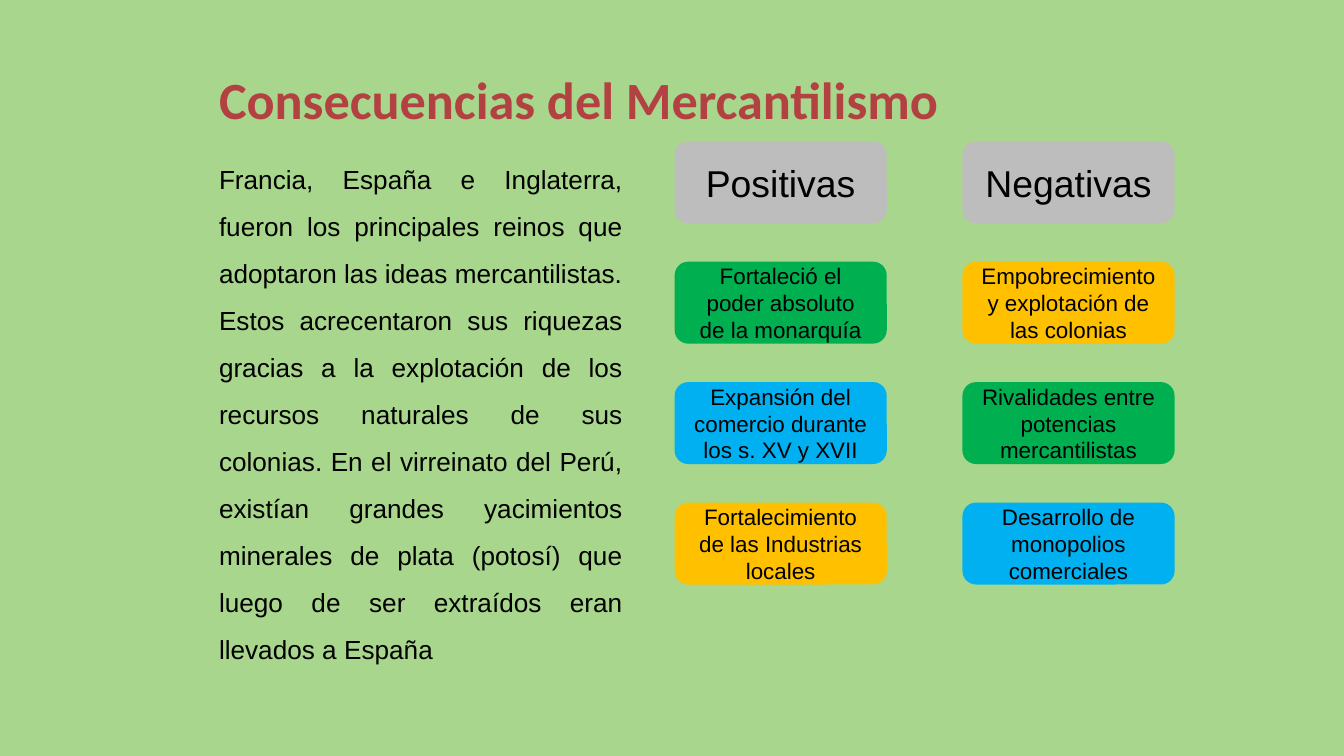
from pptx import Presentation
from pptx.dml.color import RGBColor
from pptx.enum.shapes import MSO_SHAPE as SHAPE
from pptx.enum.text import MSO_ANCHOR as ANCHOR, PP_ALIGN as ALIGN
from pptx.util import Cm, Pt

BACKGROUND = RGBColor(0xA8, 0xD6, 0x8C)
RED = RGBColor(0xB4, 0x41, 0x41)
BLACK = RGBColor(0x00, 0x00, 0x00)
GRAY = RGBColor(0xBD, 0xBD, 0xBD)
GREEN = RGBColor(0x00, 0xB0, 0x50)
AMBER = RGBColor(0xFF, 0xC0, 0x00)
BLUE = RGBColor(0x00, 0xB0, 0xF0)

TITLE = "Consecuencias del Mercantilismo"
BODY = (
    "Francia, España e Inglaterra, fueron los principales reinos que adoptaron "
    "las ideas mercantilistas. Estos acrecentaron sus riquezas gracias a la "
    "explotación de los recursos naturales de sus colonias. En el virreinato "
    "del Perú, existían grandes yacimientos minerales de plata (potosí) que "
    "luego de ser extraídos eran llevados a España"
)
POSITIVES = [
    ("Positivas", GRAY),
    ("Fortaleció el poder absoluto de la monarquía", GREEN),
    ("Expansión del comercio durante los s. XV y XVII", BLUE),
    ("Fortalecimiento de las Industrias locales", AMBER),
]
NEGATIVES = [
    ("Negativas", GRAY),
    ("Empobrecimiento y explotación de las colonias", AMBER),
    ("Rivalidades entre potencias mercantilistas", GREEN),
    ("Desarrollo de monopolios comerciales", BLUE),
]


def write(sp, text, size, align, anchor, font="Arial", color=BLACK):
    """Fill a shape with one styled paragraph and return the paragraph."""
    tf = sp.text_frame
    tf.word_wrap = True
    tf.vertical_anchor = anchor
    p = tf.paragraphs[0]
    p.text = text
    p.alignment = align
    p.font.name = font
    p.font.size = Pt(size)
    p.font.color.rgb = color
    return p


def add_title(s, x, y, w, h):
    """Place the slide title in the given box."""
    sp = s.shapes.add_textbox(Cm(x), Cm(y), Cm(w), Cm(h))
    p = write(sp, TITLE, 28, ALIGN.LEFT, ANCHOR.MIDDLE, "Calibri", RED)
    p.line_spacing = 0.8
    p.font.bold = True


def add_body(s, x, y, w, h):
    """Place the justified explanation in the given box."""
    sp = s.shapes.add_textbox(Cm(x), Cm(y), Cm(w), Cm(h))
    write(sp, BODY, 14, ALIGN.JUSTIFY, ANCHOR.TOP).line_spacing = 1.5


def add_column(s, x, y, w, h, cards):
    """Stack a heading and its consequences evenly within the given box."""
    card_h = 1.55
    step = (h - card_h) / (len(cards) - 1)
    for i, (text, color) in enumerate(cards):
        sp = s.shapes.add_shape(
            SHAPE.ROUNDED_RECTANGLE, Cm(x), Cm(y + i * step), Cm(w), Cm(card_h)
        )
        sp.shadow.inherit = False
        sp.fill.solid()
        sp.fill.fore_color.rgb = color
        sp.line.fill.background()
        write(sp, text, 20 if i == 0 else 12, ALIGN.CENTER, ANCHOR.MIDDLE)


def main():
    """Build and save the slide."""
    prs = Presentation()
    prs.slide_width, prs.slide_height = Cm(25.4), Cm(14.29)
    s = prs.slides.add_slide(prs.slide_layouts[6])
    s.background.fill.solid()
    s.background.fill.fore_color.rgb = BACKGROUND
    add_title(s, 3.89, 1.3, 17.7, 1.35)
    add_body(s, 3.89, 2.67, 8.13, 10)
    add_column(s, 12.75, 2.67, 4.01, 8.38, POSITIVES)
    add_column(s, 18.19, 2.67, 4.01, 8.38, NEGATIVES)
    prs.save("out.pptx")


if __name__ == "__main__":
    main()
